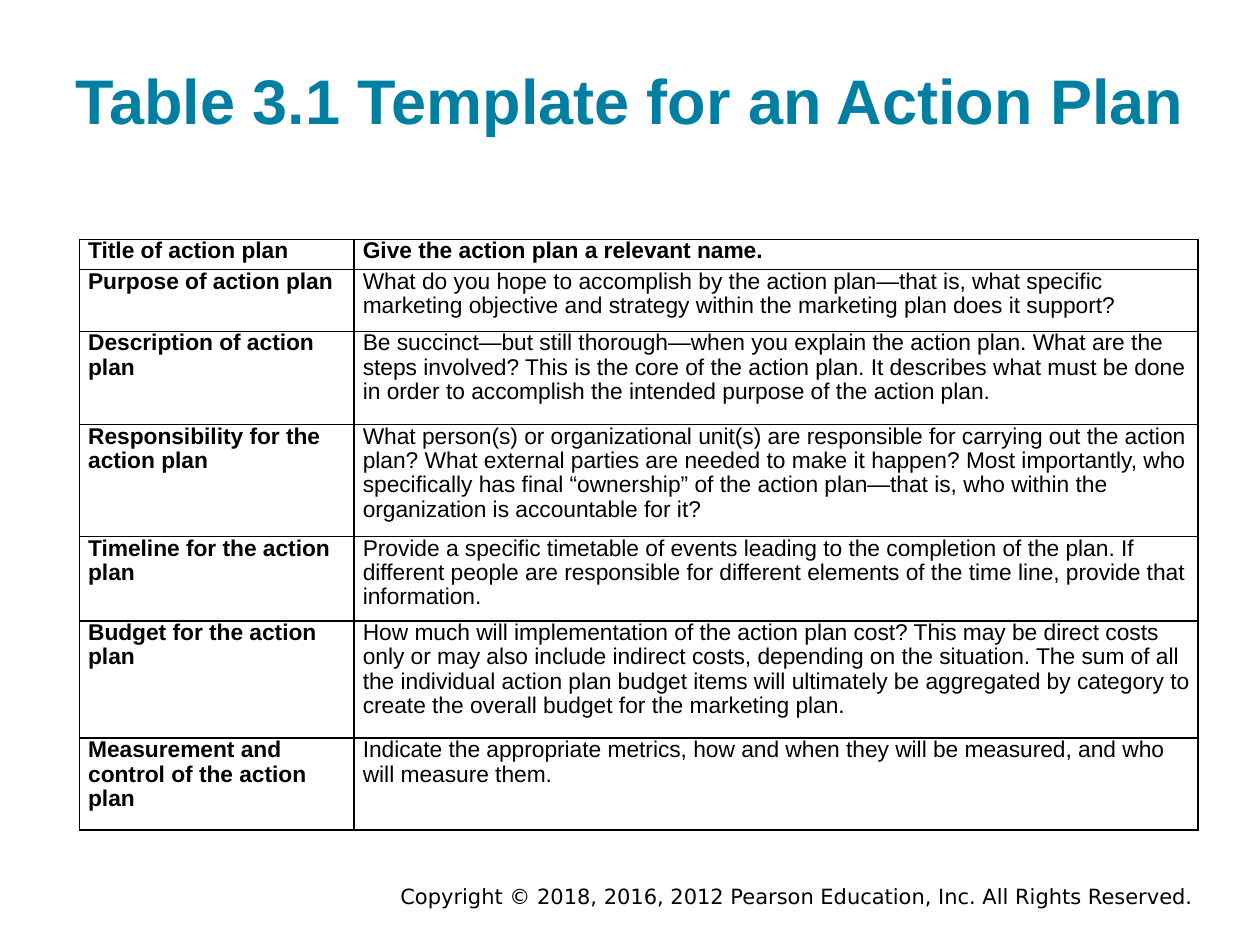
from lxml.etree import SubElement
from pptx import Presentation
from pptx.dml.color import RGBColor
from pptx.enum.text import MSO_ANCHOR, PP_ALIGN
from pptx.oxml.ns import qn
from pptx.util import Inches, Pt

TITLE = "Table 3.1 Template for an Action Plan"
CREDIT = "Copyright © 2018, 2016, 2012 Pearson Education, Inc. All Rights Reserved."
ROWS = [
    (0.24, "Title of action plan", "Give the action plan a relevant name."),
    (0.49, "Purpose of action plan",
     "What do you hope to accomplish by the action plan—that is, what specific "
     "marketing objective and strategy within the marketing plan does it support?"),
    (0.74, "Description of action plan",
     "Be succinct—but still thorough—when you explain the action plan. What are the "
     "steps involved? This is the core of the action plan. It describes what must be "
     "done in order to accomplish the intended purpose of the action plan."),
    (0.89, "Responsibility for the action plan",
     "What person(s) or organizational unit(s) are responsible for carrying out the "
     "action plan? What external parties are needed to make it happen? Most importantly, "
     "who specifically has final “ownership” of the action plan—that is, who within the "
     "organization is accountable for it?"),
    (0.67, "Timeline for the action plan",
     "Provide a specific timetable of events leading to the completion of the plan. If "
     "different people are responsible for different elements of the time line, provide "
     "that information."),
    (0.93, "Budget for the action plan",
     "How much will implementation of the action plan cost? This may be direct costs "
     "only or may also include indirect costs, depending on the situation. The sum of all "
     "the individual action plan budget items will ultimately be aggregated by category "
     "to create the overall budget for the marketing plan."),
    (0.73, "Measurement and control of the action plan",
     "Indicate the appropriate metrics, how and when they will be measured, and who "
     "will measure them."),
]
COLS = (2.18, 6.7)
THEME = {
    "title": {"name": "Arial", "size": Pt(36), "bold": True, "color": "007FA3"},
    "label": {"name": "Arial", "size": Pt(13), "bold": True, "color": "000000"},
    "body": {"name": "Arial", "size": Pt(13), "bold": False, "color": "000000"},
    "credit": {"name": "DejaVu Sans", "size": Pt(12), "bold": False, "color": "000000"},
    "border": "000000",
}


def assign(obj, values):
    for key, value in values.items():
        setattr(obj, key, value)


def write(frame, text, style, **layout):
    para = frame.paragraphs[0]
    assign(para, layout)
    run = para.add_run()
    run.text = text
    values = dict(THEME[style])
    run.font.color.rgb = RGBColor.from_string(values.pop("color"))
    assign(run.font, values)


def place(shape, *box):
    assign(shape, dict(zip(("left", "top", "width", "height"), map(Inches, box))))


def outline(cell):
    props = cell._tc.get_or_add_tcPr()
    for index, side in enumerate(("lnL", "lnR", "lnT", "lnB")):
        line = SubElement(props, qn(f"a:{side}"), w=str(Pt(1)))
        fill = SubElement(line, qn("a:solidFill"))
        SubElement(fill, qn("a:srgbClr"), val=THEME["border"])
        props.insert(index, line)


def add_plan(slide):
    heights = [row[0] for row in ROWS]
    box = map(Inches, (0.63, 1.9, sum(COLS), sum(heights)))
    table = slide.shapes.add_table(len(ROWS), len(COLS), *box).table
    assign(table, {"first_row": False, "horz_banding": False})
    for col, width in zip(table.columns, COLS):
        col.width = Inches(width)
    for r, (height, *texts) in enumerate(ROWS):
        table.rows[r].height = Inches(height)
        for c, text in enumerate(texts):
            cell = table.cell(r, c)
            assign(cell, {"margin_left": Inches(0.07), "margin_right": Inches(0.07),
                          "margin_top": 0, "margin_bottom": 0,
                          "vertical_anchor": MSO_ANCHOR.TOP})
            cell.fill.background()
            outline(cell)
            style = "label" if r == 0 or c == 0 else "body"
            write(cell.text_frame, text, style, line_spacing=0.96)


def main():
    deck = Presentation()
    assign(deck, {"slide_width": Inches(10), "slide_height": Inches(7.5)})
    slide = deck.slides.add_slide(deck.slide_layouts[5])

    title = slide.shapes.title
    place(title, 0.5, 0.39, 9, 1.27)
    sides = ("left", "right", "top", "bottom")
    assign(title.text_frame, {f"margin_{side}": Inches(0.1) for side in sides})
    assign(title.text_frame, {"vertical_anchor": MSO_ANCHOR.TOP, "word_wrap": True})
    write(title.text_frame, TITLE, "title", alignment=PP_ALIGN.LEFT)

    add_plan(slide)

    credit = slide.shapes.add_textbox(*map(Inches, (2.78, 6.96, 6.79, 0.31)))
    assign(credit.text_frame, {"word_wrap": True, "vertical_anchor": MSO_ANCHOR.MIDDLE})
    write(credit.text_frame, CREDIT, "credit", alignment=PP_ALIGN.RIGHT)
    deck.save("out.pptx")


if __name__ == "__main__":
    main()
